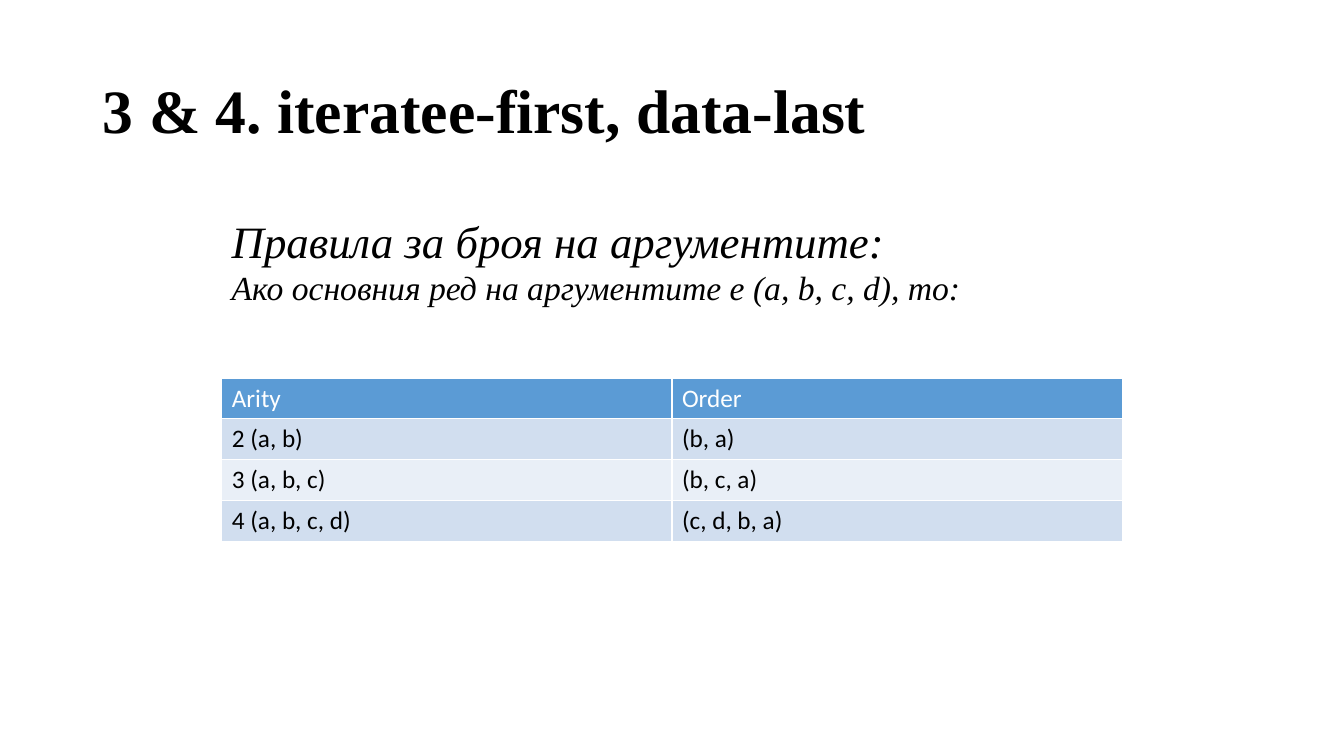
from typing import NamedTuple

from pptx import Presentation
from pptx.dml.color import RGBColor
from pptx.enum.text import MSO_ANCHOR, PP_ALIGN
from pptx.util import Inches, Pt

SERIF, SANS = "Times New Roman", "Calibri"
BLACK, WHITE = "000000", "FFFFFF"
HEADER_FILL, BAND_FILLS = "5B9BD5", ("D1DEEF", "E9EFF7")
LEFT, WIDTH = 2.2, 8.93
ROW_HEIGHT = 0.405


class Rule(NamedTuple):
    arity: str
    order: str


class Line(NamedTuple):
    text: str
    size: int


HEADER = Rule("Arity", "Order")
RULES = [
    Rule("2 (a, b)", "(b, a)"),
    Rule("3 (a, b, c)", "(b, c, a)"),
    Rule("4 (a, b, c, d)", "(c, d, b, a)"),
]
INTRO = [
    Line("Правила за броя на аргументите:", 32),
    Line("Ако основния ред на аргументите е (a, b, c, d), то:", 24),
]


def rgb(color: str) -> RGBColor:
    return RGBColor.from_string(color)


def set_font(p, name: str, size: int, color: str = BLACK,
             bold: bool = False, italic: bool = False) -> None:
    font = p.font
    font.name, font.size = name, Pt(size)
    font.bold, font.italic = bold, italic
    font.color.rgb = rgb(color)


def add_title(s, text: str) -> None:
    title = s.shapes.title
    title.left, title.top = Inches(0.92), Inches(0.4)
    title.width, title.height = Inches(11.5), Inches(1.45)
    tf = title.text_frame
    tf.text = text
    tf.vertical_anchor = MSO_ANCHOR.MIDDLE
    p = tf.paragraphs[0]
    p.alignment, p.line_spacing = PP_ALIGN.LEFT, 0.9
    set_font(p, SERIF, 44, bold=True)


def add_intro(s, lines: list[Line]) -> None:
    box = s.shapes.add_textbox(Inches(LEFT), Inches(2.07), Inches(WIDTH), Inches(1.03))
    tf = box.text_frame
    tf.word_wrap = True
    tf.text = "\n".join(line.text for line in lines)
    for p, line in zip(tf.paragraphs, lines):
        set_font(p, SERIF, line.size, italic=True)


def add_rules(s, rules: list[Rule]) -> None:
    rows = [HEADER, *rules]
    table = s.shapes.add_table(
        len(rows), len(HEADER), Inches(LEFT), Inches(3.75),
        Inches(WIDTH), Inches(ROW_HEIGHT * len(rows))).table
    table.first_row = table.horz_banding = False
    for i, rule in enumerate(rows):
        fill = BAND_FILLS[(i - 1) % 2] if i else HEADER_FILL
        for j, text in enumerate(rule):
            cell = table.cell(i, j)
            cell.text = text
            cell.fill.solid()
            cell.fill.fore_color.rgb = rgb(fill)
            set_font(cell.text_frame.paragraphs[0], SANS, 18, BLACK if i else WHITE)


def main() -> None:
    prs = Presentation()
    prs.slide_width, prs.slide_height = Inches(13.33), Inches(7.5)
    s = prs.slides.add_slide(prs.slide_layouts[5])
    add_title(s, "3 & 4. iteratee-first, data-last")
    add_rules(s, RULES)
    add_intro(s, INTRO)
    prs.save("out.pptx")


if __name__ == "__main__":
    main()
